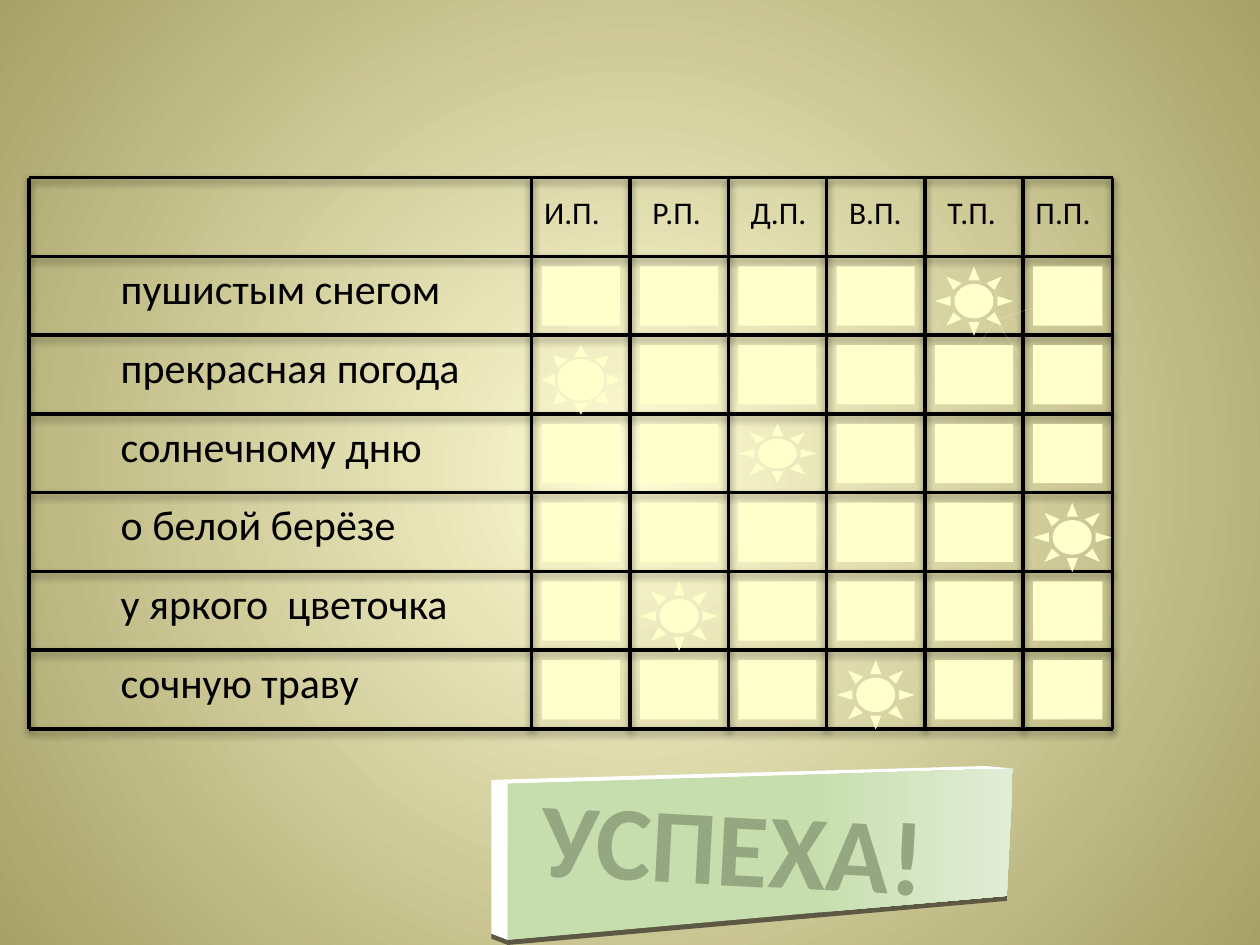
from dataclasses import dataclass

from lxml import etree
from pptx import Presentation
from pptx.dml.color import RGBColor
from pptx.enum.shapes import MSO_CONNECTOR, MSO_SHAPE
from pptx.enum.text import PP_ALIGN
from pptx.oxml.ns import qn
from pptx.util import Inches, Pt

STRAIGHT = MSO_CONNECTOR.STRAIGHT
RECTANGLE = MSO_SHAPE.RECTANGLE
SUN = MSO_SHAPE.SUN
STAR = MSO_SHAPE.STAR_5_POINT
LEFT = PP_ALIGN.LEFT
CENTER = PP_ALIGN.CENTER

COLORS = {
    "ink": "000000",
    "cell": "FFFFCC",
    "white": "FFFFFF",
    "background_center": "FFFCD4",
    "background_edge": "A6A167",
    "banner_left": "C6DEAD",
    "banner_right": "E2EDD7",
    "banner_bottom": "5C5843",
    "banner_text": "95A780",
}
FONT = "Calibri"
TABLE_LEFT, TABLE_TOP, TABLE_RIGHT = 0.23, 1.41, 8.83
CASES_LEFT, COLUMN_STEP, ROW_STEP = 4.22, 0.78, 0.625
CELL_GAP, CELL_WIDTH, CELL_HEIGHT = 0.08, 0.62, 0.47
LAST_CELL_WIDTH, SUN_HEIGHT = 0.55, 0.55
CASES = ["И.П.", "Р.П.", "Д.П.", "В.П.", "Т.П.", "П.П."]


@dataclass
class Phrase:
    text: str
    case: int
    sun_height: float = SUN_HEIGHT
    sun_adjustment: float = 0.25


@dataclass
class Label:
    text: str
    left: float
    top: float
    width: float
    height: float
    size: int
    color: str = "ink"
    bold: bool = False
    alignment: PP_ALIGN = LEFT
    rotation: float = 0


@dataclass
class Face:
    color: str
    points: list[tuple[float, float]]


PHRASES = [
    Phrase("пушистым снегом", 4),
    Phrase("прекрасная погода", 0, sun_adjustment=0.199),
    Phrase("солнечному дню", 2, sun_height=CELL_HEIGHT),
    Phrase("о белой берёзе", 5),
    Phrase("у яркого  цветочка", 1),
    Phrase("сочную траву", 3),
]
BANNER_FACES = [
    Face("banner_bottom", [(3.9, 7.41), (4.03, 7.46), (7.99, 7.1), (7.99, 7.15), (4.03, 7.5), (3.9, 7.45)]),
    Face("white", [(3.9, 6.19), (7.82, 6.08), (8.04, 6.1), (4.03, 6.22)]),
    Face("white", [(3.9, 6.19), (4.03, 6.22), (4.03, 7.46), (3.9, 7.41)]),
    Face("banner_left", [(4.03, 6.22), (8.04, 6.1), (7.99, 7.11), (4.03, 7.46)]),
]


def rgb(name: str) -> RGBColor:
    return RGBColor.from_string(COLORS[name])


def set_gradient(fill, stops: list[tuple[str, float]]) -> None:
    fill.gradient()
    for stop, (color, position) in zip(fill.gradient_stops, stops):
        stop.color.rgb = rgb(color)
        stop.position = position


def paint_background(slide) -> None:
    set_gradient(slide.background.fill, [("background_center", 0), ("background_edge", 1)])
    linear = slide.element.find(".//" + qn("a:lin"))
    gradient = linear.getparent()
    gradient.remove(linear)
    circle = etree.SubElement(gradient, qn("a:path"), path="circle")
    etree.SubElement(circle, qn("a:fillToRect"), l="50000", t="50000", r="50000", b="50000")


def add_rule(slide, start: tuple[float, float], end: tuple[float, float]) -> None:
    connector = slide.shapes.add_connector(STRAIGHT, *map(Inches, start + end))
    connector.line.color.rgb = rgb("ink")
    connector.line.width = Pt(2)
    effects = etree.SubElement(connector.element.spPr, qn("a:effectLst"))
    shadow = etree.SubElement(
        effects, qn("a:outerShdw"), blurRad=str(Pt(4)), dist=str(Pt(2)), dir="5400000", rotWithShape="0"
    )
    color = etree.SubElement(shadow, qn("a:srgbClr"), val=COLORS["ink"])
    etree.SubElement(color, qn("a:alpha"), val="40000")


def add_label(slide, label: Label) -> None:
    box = slide.shapes.add_textbox(*map(Inches, (label.left, label.top, label.width, label.height)))
    box.rotation = label.rotation
    box.text_frame.word_wrap = True
    paragraph = box.text_frame.paragraphs[0]
    paragraph.text = label.text
    paragraph.alignment = label.alignment
    font = paragraph.runs[0].font
    font.name = FONT
    font.size = Pt(label.size)
    font.bold = label.bold
    font.color.rgb = rgb(label.color)


def style_plain(shape, color: str) -> None:
    shape.shadow.inherit = False
    shape.fill.solid()
    shape.fill.fore_color.rgb = rgb(color)
    shape.line.fill.background()


def add_figure(slide, kind: MSO_SHAPE, left: float, top: float, width: float, height: float, color: str):
    shape = slide.shapes.add_shape(kind, *map(Inches, (left, top, width, height)))
    style_plain(shape, color)
    return shape


def add_face(slide, face: Face):
    points = [(Inches(x), Inches(y)) for x, y in face.points]
    builder = slide.shapes.build_freeform(*points[0])
    builder.add_line_segments(points[1:], close=True)
    shape = builder.convert_to_shape()
    style_plain(shape, face.color)
    return shape


def add_grid(slide) -> None:
    bottom = TABLE_TOP + ROW_STEP * (len(PHRASES) + 1)
    for row in range(len(PHRASES) + 2):
        y = TABLE_TOP + row * ROW_STEP
        add_rule(slide, (TABLE_LEFT, y), (TABLE_RIGHT, y))
    case_lines = [CASES_LEFT + column * COLUMN_STEP for column in range(len(CASES))]
    for x in [TABLE_LEFT, *case_lines, TABLE_RIGHT]:
        add_rule(slide, (x, TABLE_TOP), (x, bottom))


def add_texts(slide) -> None:
    last = len(CASES) - 1
    for column, case in enumerate(CASES):
        gap = 0 if column in (0, last) else CELL_GAP
        add_label(slide, Label(case, CASES_LEFT + column * COLUMN_STEP + gap, 1.48, 0.7, 0.4, 18))
    for row, phrase in enumerate(PHRASES, start=1):
        add_label(slide, Label(phrase.text, 0.86, TABLE_TOP + row * ROW_STEP, 3.75, 0.51, 24))


def add_banner(slide) -> None:
    for face in BANNER_FACES:
        front = add_face(slide, face)
    set_gradient(front.fill, [("banner_left", 0.6), ("banner_right", 1)])
    front.fill.gradient_angle = 0
    add_label(slide, Label("УСПЕХА!", 4.02, 6.15, 3.6, 1.11, 60, "banner_text", True, CENTER, 3))


def add_cells(slide) -> None:
    last = len(CASES) - 1
    for row, phrase in enumerate(PHRASES, start=1):
        top = TABLE_TOP + row * ROW_STEP + CELL_GAP
        for column in range(len(CASES)):
            left = CASES_LEFT + column * COLUMN_STEP + CELL_GAP
            if column == phrase.case:
                sun = add_figure(slide, SUN, left, top, CELL_WIDTH, phrase.sun_height, "cell")
                sun.adjustments[0] = phrase.sun_adjustment
            else:
                width = LAST_CELL_WIDTH if column == last else CELL_WIDTH
                add_figure(slide, RECTANGLE, left, top, width, CELL_HEIGHT, "cell")


def main() -> None:
    presentation = Presentation()
    presentation.slide_width, presentation.slide_height = Inches(10), Inches(7.5)
    slide = presentation.slides.add_slide(presentation.slide_layouts[6])
    paint_background(slide)
    add_grid(slide)
    add_texts(slide)
    add_banner(slide)
    star = add_figure(slide, STAR, 7.59, 2.2, 0.62, 0.62, "white")
    star.adjustments[0] = 0
    add_cells(slide)
    presentation.save("out.pptx")


if __name__ == "__main__":
    main()
